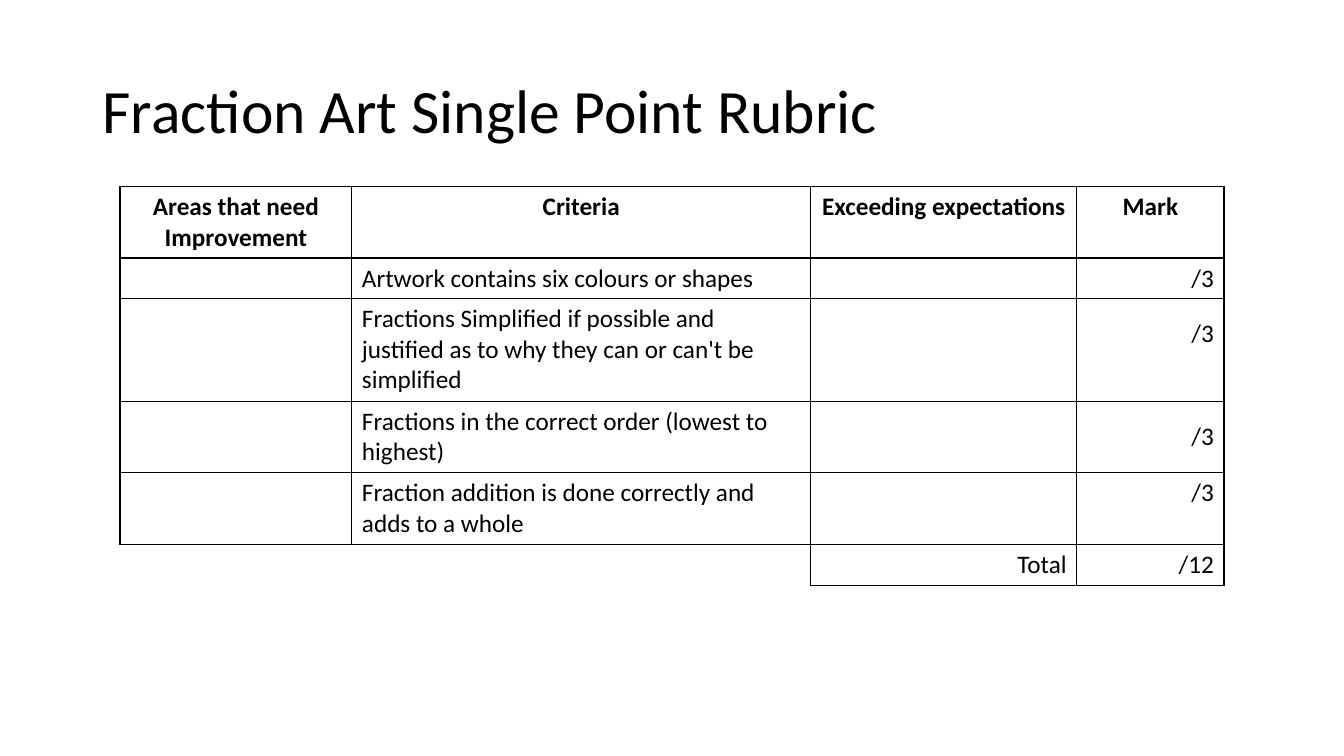
from pptx import Presentation
from pptx.dml.color import RGBColor
from pptx.enum.text import MSO_ANCHOR, PP_ALIGN
from pptx.oxml import parse_xml
from pptx.oxml.ns import nsdecls
from pptx.util import Inches, Pt

BLACK = RGBColor(0, 0, 0)
FONT = "Calibri"
LEFT, CENTER, RIGHT = PP_ALIGN.LEFT, PP_ALIGN.CENTER, PP_ALIGN.RIGHT
TOP, MIDDLE = MSO_ANCHOR.TOP, MSO_ANCHOR.MIDDLE

COLUMNS = [2.3, 4.55, 2.64, 1.46]
HEADERS = ["Areas that need Improvement", "Criteria", "Exceeding expectations", "Mark"]
CRITERIA = [
    "Artwork contains six colours or shapes",
    "Fractions Simplified if possible and justified as to why they can or can't be simplified",
    "Fractions in the correct order (lowest to highest)",
    "Fraction addition is done correctly and adds to a whole",
]
ROWS = [HEADERS] + [["", text, "", "/3"] for text in CRITERIA] + [["", "", "Total", "/12"]]
ROW_HEIGHTS = [0.71, 0.4, 1.02, 0.71, 0.71, 0.41]
RAISED_MARK_ROWS = (2, 4)


def style_text(tf, text, size, align=LEFT, bold=False):
    tf.text = text
    p = tf.paragraphs[0]
    p.alignment = align
    for font in [p.font] + [r.font for r in p.runs]:
        font.name = FONT
        font.size = Pt(size)
        font.bold = bold
        font.color.rgb = BLACK
    return p


def set_borders(cell, visible):
    tc_pr = cell._tc.get_or_add_tcPr()
    for i, side in enumerate("LRTB"):
        fill = "<a:noFill/>"
        if side in visible:
            fill = f'<a:solidFill><a:srgbClr val="{BLACK}"/></a:solidFill>'
        line = f'<a:ln{side} {nsdecls("a")} w="{Pt(1)}">{fill}</a:ln{side}>'
        tc_pr.insert(i, parse_xml(line))


def add_title(s, left, top, width, height):
    tf = s.shapes.add_textbox(*map(Inches, (left, top, width, height))).text_frame
    tf.word_wrap = True
    tf.vertical_anchor = MIDDLE
    style_text(tf, "Fraction Art Single Point Rubric", 44).line_spacing = 0.9


def add_rubric(s, left, top):
    width, height = sum(COLUMNS), sum(ROW_HEIGHTS)
    frame = s.shapes.add_table(len(ROWS), len(COLUMNS),
                               *map(Inches, (left, top, width, height)))
    table = frame.table
    table.first_row = table.horz_banding = False
    for column, size in zip(table.columns, COLUMNS):
        column.width = Inches(size)
    last_row = len(ROWS) - 1
    for i, texts in enumerate(ROWS):
        table.rows[i].height = Inches(ROW_HEIGHTS[i])
        for j, text in enumerate(texts):
            cell = table.cell(i, j)
            is_mark = i > 0 and j > 1
            align = CENTER if i == 0 else RIGHT if is_mark else LEFT
            style_text(cell.text_frame, text, 18, align, i == 0)
            cell.vertical_anchor = MIDDLE if is_mark else TOP
            if j == 3 and i in RAISED_MARK_ROWS:
                cell.margin_bottom = Inches(0.36)
            cell.fill.background()
            corner = {0: "T", 1: "TR"}
            set_borders(cell, corner.get(j, "LRTB") if i == last_row else "LRTB")


def main():
    prs = Presentation()
    prs.slide_width, prs.slide_height = Inches(13.33), Inches(7.5)
    s = prs.slides.add_slide(prs.slide_layouts[6])
    add_title(s, 0.92, 0.4, 11.5, 1.45)
    add_rubric(s, 1.19, 1.85)
    prs.save("out.pptx")


if __name__ == "__main__":
    main()
